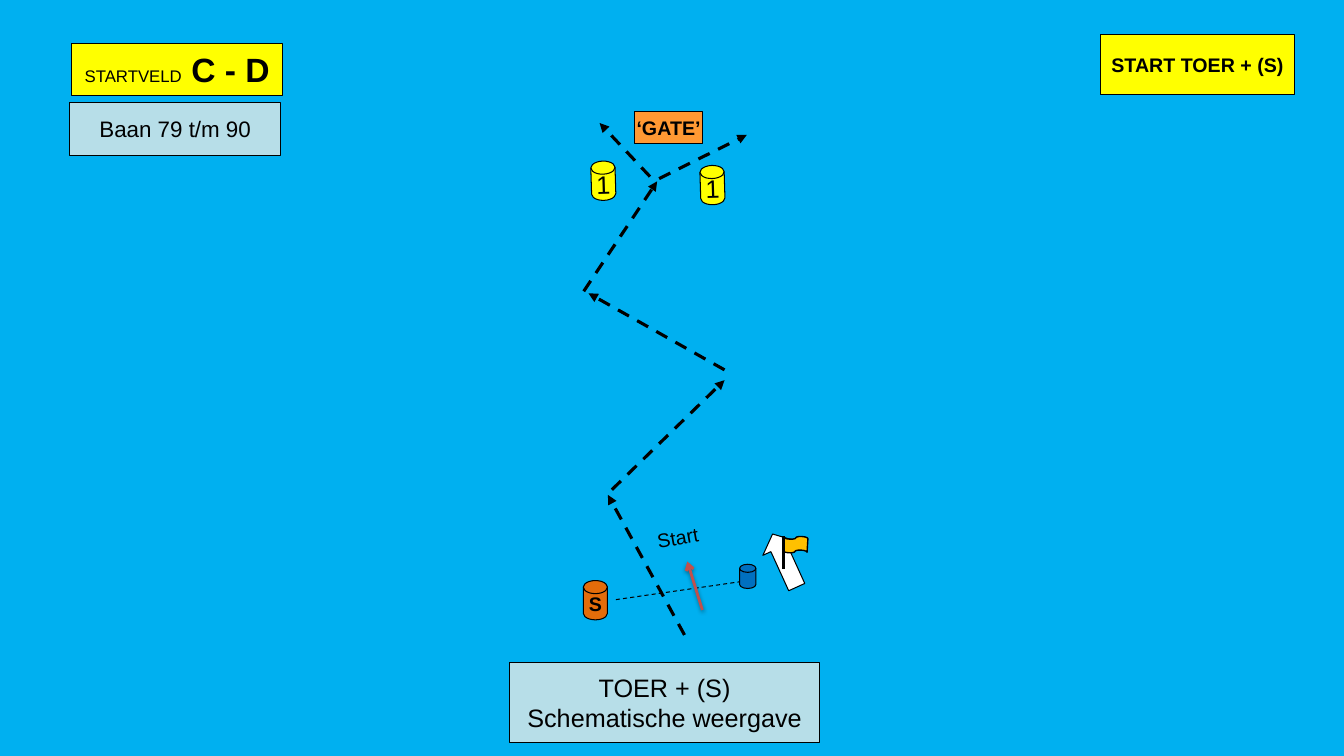
from lxml import etree
from pptx import Presentation
from pptx import util as u
from pptx.dml.color import RGBColor
from pptx.enum import dml, shapes, text
from pptx.oxml import ns

COLOURS = {
    "water": "00B0F0", "black": "000000", "yellow": "FFFF00", "pale": "B7DEE8",
    "white": "FFFFFF", "blue": "0070C0", "orange": "E46C0A", "gate": "FF9933",
    "flag": "FFC000", "red": "C0504D",
}
FONT = "Arial"
SHAPE = shapes.MSO_SHAPE
BUOY_SIZE = (0.61, 0.99)


def colour(name):
    return RGBColor.from_string(COLOURS[name])


def write(shape, *paragraphs):
    """Each paragraph is a list of (text, size, bold) runs."""
    frame = shape.text_frame
    frame.word_wrap = False
    frame.auto_size = text.MSO_AUTO_SIZE.NONE
    frame.vertical_anchor = text.MSO_ANCHOR.MIDDLE
    for index, runs in enumerate(paragraphs):
        para = frame.add_paragraph() if index else frame.paragraphs[0]
        para.alignment = text.PP_ALIGN.CENTER
        for words, size, bold in runs:
            span = para.add_run()
            span.text = words
            span.font.name = FONT
            span.font.size = u.Pt(size)
            span.font.bold = bold
            span.font.color.rgb = colour("black")


def paint(shape, fill, width=0.75):
    shape.fill.solid()
    shape.fill.fore_color.rgb = colour(fill)
    shape.line.color.rgb = colour("black")
    shape.line.width = u.Pt(width)


def add_figure(page, kind, box, fill, rotation=0, width=0.75):
    figure = page.shapes.add_shape(kind, *map(u.Cm, box))
    figure.shadow.inherit = False
    figure.rotation = rotation
    paint(figure, fill, width)
    return figure


def add_line(page, origin, start, end, width=2.25, ink="black", dashed=False, head=None):
    left, top = origin
    ends = (left + start[0], top + start[1], left + end[0], top + end[1])
    line = page.shapes.add_connector(shapes.MSO_CONNECTOR.STRAIGHT, *map(u.Cm, ends))
    line.line.color.rgb = colour(ink)
    line.line.width = u.Pt(width)
    if dashed:
        line.line.dash_style = dml.MSO_LINE.DASH
    properties = line._element.spPr
    if head:
        outline = properties.find(ns.qn("a:ln"))
        etree.SubElement(outline, ns.qn("a:tailEnd"), type=head)
    return etree.SubElement(properties, ns.qn("a:effectLst"))


def add_sign(page, box, fill, *paragraphs):
    write(add_figure(page, SHAPE.RECTANGLE, box, fill), *paragraphs)


def add_title(page, box):
    title = page.shapes.title
    title.left, title.top, title.width, title.height = map(u.Cm, box)
    paint(title, "yellow")
    write(title, [("START TOER + (S)", 14, True)])


def add_field_signs(page, box):
    left, top, width, height = box
    add_sign(page, (left + 0.05, top, width, height), "yellow",
             [("STARTVELD", 12, False), (" C - D", 24, True)])
    add_sign(page, (left, top + 1.5, width, height), "pale",
             [("Baan 79 t/m 90", 16, False)])


def add_caption(page, box):
    add_sign(page, box, "pale", [("TOER + (S)", 18, False)],
             [("Schematische weergave", 18, False)])


def add_route(page, origin):
    legs = [
        ((2.55, 11.43), (0.62, 7.9)),
        ((0.72, 7.77), (3.56, 5.01)),
        ((3.56, 4.75), (0.13, 2.82)),
        ((0.01, 2.77), (1.86, 0)),
    ]
    for start, end in legs:
        add_line(page, origin, start, end, dashed=True, head="triangle")


def add_gate(page, origin):
    left, top = origin
    # Ways out on both sides of the gate
    for start, end in [((1.48, 1.65), (0.21, 0.3)), ((1.71, 1.7), (3.92, 0.6))]:
        add_line(page, origin, start, end, dashed=True, head="triangle")
    # Pair of gate buoys
    for x, y in [(0, 1.26), (2.75, 1.37)]:
        buoy = add_figure(page, SHAPE.FLOWCHART_MAGNETIC_DISK,
                          (left + x, top + y, *BUOY_SIZE), "yellow", 358.3)
        write(buoy, [("1", 18, False)])
    add_sign(page, (left + 1.1, top + 0.02, 1.7, 0.79), "gate", [("‘GATE’", 14, True)])


def add_start(page, origin):
    left, top = origin
    # Wind arrow
    wind = add_figure(page, SHAPE.UP_ARROW, (left + 4.63, top + 0.19, 0.89, 1.47),
                      "white", 335.5)
    wind.adjustments[1] = 0.435
    # Start line between its two buoys
    add_line(page, origin, (0.82, 1.91), (4.15, 1.43), 0.75, dashed=True)
    add_figure(page, SHAPE.FLOWCHART_MAGNETIC_DISK,
               (left + 3.94, top + 1.02, 0.41, 0.61), "blue")
    buoy = add_figure(page, SHAPE.FLOWCHART_MAGNETIC_DISK,
                      (left, top + 1.43, *BUOY_SIZE), "orange")
    write(buoy, [("S", 14, True)])
    label = page.shapes.add_textbox(*map(u.Cm, (left + 1.58, top + 0.03, 1.6, 0.61)))
    label.rotation = 349.8
    write(label, [("Start", 14, False)])
    # Starting direction with its soft shadow
    effects = add_line(page, origin, (3, 2.17), (2.62, 0.95), 2, "red", head="arrow")
    shadow = etree.SubElement(effects, ns.qn("a:outerShdw"), blurRad=str(u.Pt(3.1)),
                              dist=str(u.Pt(1.6)), dir="5400000", rotWithShape="0")
    ink = etree.SubElement(shadow, ns.qn("a:srgbClr"), val=COLOURS["black"])
    etree.SubElement(ink, ns.qn("a:alpha"), val="38000")
    # Flag and pole
    add_figure(page, SHAPE.FLOWCHART_PUNCHED_TAPE,
               (left + 5.04, top + 0.31, 0.61, 0.43), "flag", 3.5, 1)
    add_line(page, origin, (5.04, 0.31), (5.04, 1.15))


def main():
    deck = Presentation()
    deck.slide_width, deck.slide_height = u.Cm(33.87), u.Cm(19.05)
    page = deck.slides.add_slide(deck.slide_layouts[5])
    page.background.fill.solid()
    page.background.fill.fore_color.rgb = colour("water")
    add_title(page, (27.74, 0.86, 4.88, 1.52))
    add_field_signs(page, (1.75, 1.09, 5.33, 1.32))
    add_caption(page, (12.85, 16.69, 7.8, 2.03))
    add_route(page, (14.7, 4.57))
    add_gate(page, (14.9, 2.8))
    add_start(page, (14.7, 13.2))
    deck.save("out.pptx")


if __name__ == "__main__":
    main()
